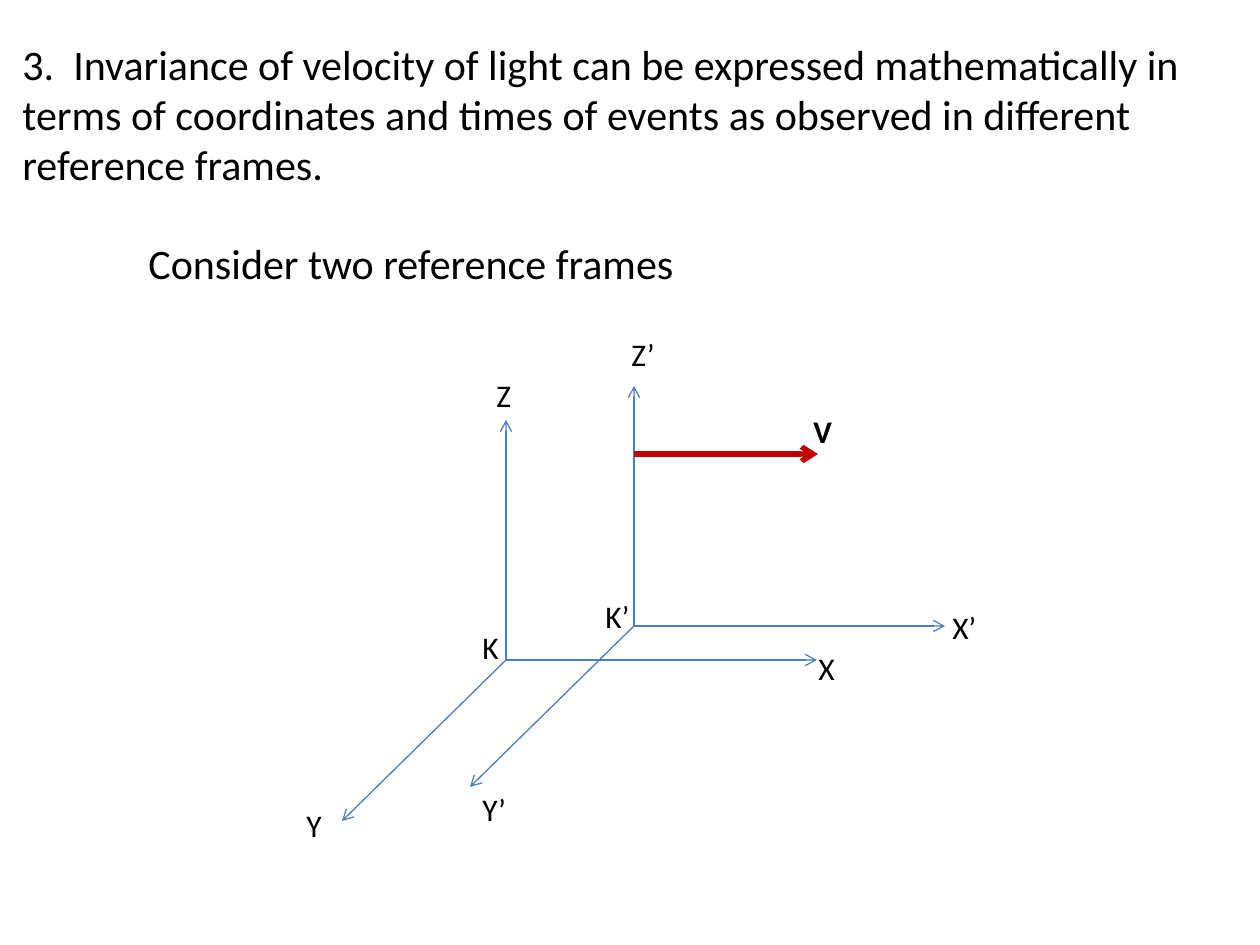
"""Build a slide showing two reference frames in relative motion."""
from dataclasses import dataclass

from lxml import etree
from pptx import Presentation
from pptx.dml.color import RGBColor
from pptx.enum.shapes import MSO_CONNECTOR
from pptx.enum.text import MSO_AUTO_SIZE
from pptx.oxml.ns import qn
from pptx.shapes.shapetree import GroupShapes, SlideShapes
from pptx.util import Emu, Pt

STRAIGHT = MSO_CONNECTOR.STRAIGHT
FIT_TEXT = MSO_AUTO_SIZE.SHAPE_TO_FIT_TEXT
BLANK_LAYOUT = 6
PX_PER_INCH = 126


@dataclass(frozen=True)
class Theme:
    font: str = "Calibri"
    text: RGBColor = RGBColor(0x00, 0x00, 0x00)
    axis: RGBColor = RGBColor(0x4B, 0x7E, 0xBC)
    velocity: RGBColor = RGBColor(0xC0, 0x00, 0x00)
    body_size: float = 24
    label_size: float = 18
    axis_width: float = 0.75
    velocity_width: float = 3


@dataclass(frozen=True)
class Label:
    text: str
    left: int
    top: int
    width: int
    height: int = 50
    size: float = Theme.label_size
    bold: bool = False
    wrap: bool = True


@dataclass(frozen=True)
class Arrow:
    start: tuple[int, int]
    offset: tuple[int, int]
    color: RGBColor = Theme.axis
    width: float = Theme.axis_width


FRAME_ORIGINS = ((506, 660), (634, 626))
AXIS_OFFSETS = ((0, -240), (-164, 161), (311, 0))
VELOCITY = Arrow((634, 454), (184, 0), Theme.velocity, Theme.velocity_width)
STATEMENT = Label(
    "3.  Invariance of velocity of light can be expressed mathematically in terms of "
    "coordinates and times of events as observed in different reference frames.",
    10, 32, 1239, 165, Theme.body_size,
)
PROMPT = Label("Consider two reference frames", 136, 231, 556, 63, Theme.body_size, wrap=False)
FRAME_LABELS = (
    Label("K", 470, 622, 73),
    Label("K’", 593, 591, 87),
    Label("X’", 940, 602, 87),
    Label("Z’", 619, 329, 93),
    Label("Y’", 470, 784, 86),
    Label("Y", 294, 800, 72),
    Label("Z", 484, 370, 71),
    Label("X", 806, 643, 73),
)
VELOCITY_LABEL = Label("V", 801, 406, 77, bold=True)


def px(length: int) -> Emu:
    """Convert pixels to EMU."""
    return Emu(round(length * 914400 / PX_PER_INCH))


def draw_label(shapes: SlideShapes | GroupShapes, label: Label) -> None:
    """Add one text box."""
    box = shapes.add_textbox(px(label.left), px(label.top), px(label.width), px(label.height))
    frame = box.text_frame
    frame.word_wrap = label.wrap
    frame.auto_size = FIT_TEXT
    paragraph = frame.paragraphs[0]
    paragraph.text = label.text
    font = paragraph.font
    font.name = Theme.font
    font.size = Pt(label.size)
    font.bold = label.bold
    font.color.rgb = Theme.text


def draw_arrow(shapes: GroupShapes, arrow: Arrow) -> None:
    """Add one straight line with an open arrowhead at its end."""
    (x, y), (dx, dy) = arrow.start, arrow.offset
    connector = shapes.add_connector(STRAIGHT, px(x), px(y), px(x + dx), px(y + dy))
    connector.line.color.rgb = arrow.color
    connector.line.width = Pt(arrow.width)
    etree.SubElement(connector.line._get_or_add_ln(), qn("a:tailEnd"), type="arrow")
    etree.SubElement(connector._element.spPr, qn("a:effectLst"))


def main() -> None:
    """Build and save the slide."""
    presentation = Presentation()
    presentation.slide_width = px(1260)
    presentation.slide_height = px(945)
    slide = presentation.slides.add_slide(presentation.slide_layouts[BLANK_LAYOUT])
    draw_label(slide.shapes, STATEMENT)
    diagram = slide.shapes.add_group_shape().shapes
    for origin in FRAME_ORIGINS:
        for offset in AXIS_OFFSETS:
            draw_arrow(diagram, Arrow(origin, offset))
    for label in FRAME_LABELS:
        draw_label(diagram, label)
    draw_arrow(diagram, VELOCITY)
    draw_label(diagram, VELOCITY_LABEL)
    draw_label(slide.shapes, PROMPT)
    presentation.save("out.pptx")


if __name__ == "__main__":
    main()
